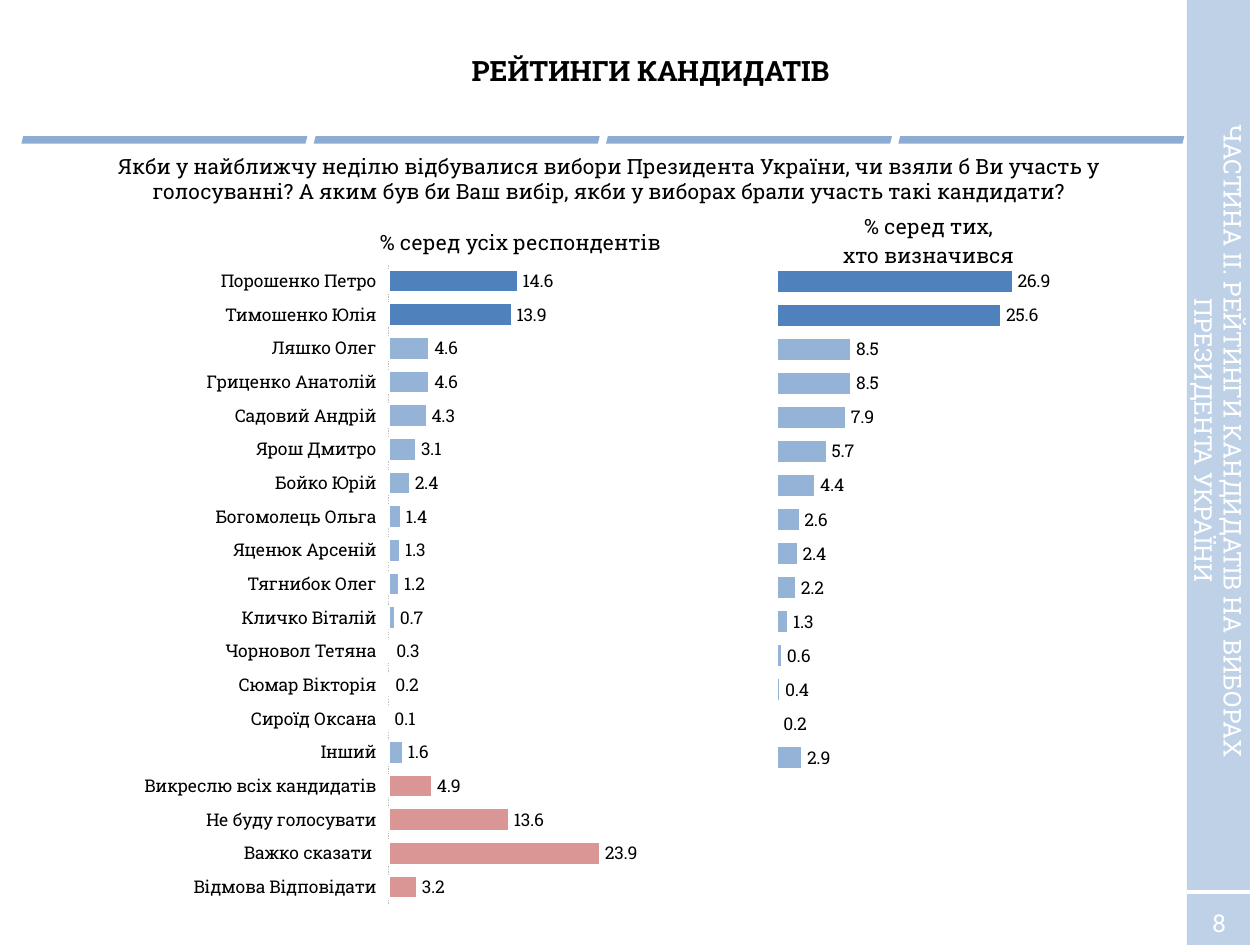
import pptx
import pptx.chart.data
import pptx.dml.color
import pptx.enum.chart
import pptx.enum.dml
import pptx.enum.shapes
import pptx.enum.text
import pptx.oxml
import pptx.oxml.ns
import pptx.util

PX = 9144  # EMU in one px, 100 px to the inch
FONT = "Roboto Slab"
COLOURS = {
    "leader": "4F81BD", "candidate": "95B3D7", "no_choice": "D99694",
    "axis": "BFBFBF", "text": "000000", "white": "FFFFFF",
}
# name, % of all respondents, % of those who decided, from top to bottom
RATINGS = [
    ("Порошенко Петро", 14.6, 26.9),
    ("Тимошенко Юлія", 13.9, 25.6),
    ("Ляшко Олег", 4.6, 8.5),
    ("Гриценко Анатолій", 4.6, 8.5),
    ("Садовий Андрій", 4.3, 7.9),
    ("Ярош Дмитро", 3.1, 5.7),
    ("Бойко Юрій", 2.4, 4.4),
    ("Богомолець Ольга", 1.4, 2.6),
    ("Яценюк Арсеній", 1.3, 2.4),
    ("Тягнибок Олег", 1.2, 2.2),
    ("Кличко Віталій", 0.7, 1.3),
    ("Чорновол Тетяна", 0.3, 0.6),
    ("Сюмар Вікторія", 0.2, 0.4),
    ("Сироїд Оксана", 0.1, 0.2),
    ("Інший", 1.6, 2.9),
    ("Викреслю всіх кандидатів", 4.9, None),
    ("Не буду голосувати", 13.6, None),
    ("Важко сказати ", 23.9, None),
    ("Відмова Відповідати", 3.2, None),
]


def emu(box):
    return [value * PX for value in box]


def rgb(name):
    return pptx.dml.color.RGBColor.from_string(COLOURS[name])


def add_element(parent, tag, **attributes):
    child = parent.makeelement(pptx.oxml.ns.qn(tag), attributes)
    parent.append(child)
    return child


def style_font(font, size, colour="text", bold=False):
    font.name = FONT
    font.size = pptx.util.Pt(size)
    font.bold = bold
    font.color.rgb = rgb(colour)


def paint(fill, colour):
    fill.solid()
    fill.fore_color.rgb = rgb(colour)


def add_tinted_shape(page, kind, box, colour, opacity):
    shape = page.shapes.add_shape(kind, *emu(box))
    shape.shadow.inherit = False
    paint(shape.fill, colour)
    shape.line.fill.background()
    tint = shape._element.spPr.find(".//" + pptx.oxml.ns.qn("a:srgbClr"))
    add_element(tint, "a:alpha", val=str(opacity * 1000))


def add_text(page, box, lines, size, colour="text", bold=False,
             anchor=pptx.enum.text.MSO_ANCHOR.MIDDLE):
    label = page.shapes.add_textbox(*emu(box))
    frame = label.text_frame
    frame.word_wrap = True
    frame.vertical_anchor = anchor
    for number, line in enumerate(lines):
        para = frame.add_paragraph() if number else frame.paragraphs[0]
        para.alignment = pptx.enum.text.PP_ALIGN.CENTER
        if number:
            para.space_before = pptx.util.Pt(2)
        span = para.add_run()
        span.text = line
        style_font(span.font, size, colour, bold)
    return label


def add_sidebar(page, box, section, number):
    left, top, width, height = box
    add_tinted_shape(page, pptx.enum.shapes.MSO_SHAPE.RECTANGLE, box, "candidate", 60)
    add_text(page, (left - 4, top + 715, width + 9, 34), [number], 14, "white")
    rule = page.shapes.add_connector(
        pptx.enum.shapes.MSO_CONNECTOR.STRAIGHT,
        *emu((left, top + 708, left + width, top + 708)))
    rule.line.color.rgb = rgb("white")
    rule.line.width = pptx.util.Pt(2)
    add_element(rule._element.spPr, "a:effectLst")
    heading = add_text(page, (left - 250, top + 321, 550, 57), [section], 14, "white",
                       anchor=pptx.enum.text.MSO_ANCHOR.TOP)
    heading.rotation = 90


def add_divider(page, box, count=4, gap=5):
    left, top, width, height = box
    pitch = (width + gap) // count
    for index in range(count):
        add_tinted_shape(page, pptx.enum.shapes.MSO_SHAPE.PARALLELOGRAM,
                         (left + index * pitch, top, pitch - gap, height), "leader", 65)


def set_plot_area(chart, **layout):
    """Fix the inner plot area as fractions of the chart and clear the background."""
    space = chart._chartSpace
    plot_area = space.find(".//" + pptx.oxml.ns.qn("c:plotArea"))
    for old in plot_area.findall(pptx.oxml.ns.qn("c:layout")):
        plot_area.remove(old)
    holder = add_element(plot_area, "c:layout")
    plot_area.insert(0, holder)
    manual = add_element(holder, "c:manualLayout")
    settings = {"layoutTarget": "inner", "xMode": "edge", "yMode": "edge", **layout}
    for tag, value in settings.items():
        add_element(manual, "c:" + tag, val=str(value))
    background = add_element(space, "c:spPr")
    add_element(background, "a:noFill")
    add_element(add_element(background, "a:ln"), "a:noFill")
    space.find(pptx.oxml.ns.qn("c:chart")).addnext(background)


def style_category_axis(axis):
    axis.has_major_gridlines = False
    axis.major_tick_mark = pptx.enum.chart.XL_TICK_MARK.NONE
    axis.minor_tick_mark = pptx.enum.chart.XL_TICK_MARK.NONE
    axis.tick_label_position = pptx.enum.chart.XL_TICK_LABEL_POSITION.LOW
    style_font(axis.tick_labels.font, 10)
    axis.format.line.color.rgb = rgb("axis")
    axis.format.line.width = pptx.util.Pt(0.75)
    axis.format.line.dash_style = pptx.enum.dml.MSO_LINE.ROUND_DOT


def add_rating_chart(page, box, names, values, point_colours, plot_width, show_names):
    data = pptx.chart.data.CategoryChartData(number_format="0.0")
    data.categories = names
    data.add_series("Series 1", values)
    chart = page.shapes.add_chart(
        pptx.enum.chart.XL_CHART_TYPE.BAR_CLUSTERED, *emu(box), data).chart
    chart.has_legend = False
    chart.has_title = False
    style_font(chart.font, 10)
    set_plot_area(chart, x=0.457, y=0.018, w=plot_width, h=0.949)

    style_category_axis(chart.category_axis)
    chart.category_axis.visible = show_names
    chart.value_axis.has_major_gridlines = False
    chart.value_axis.minimum_scale = 0
    chart.value_axis.maximum_scale = 45
    chart.value_axis.visible = False

    plot = chart.plots[0]
    plot.gap_width = 50
    plot.vary_by_categories = False
    bars = plot.series[0]
    bars.invert_if_negative = False
    for index, colour in point_colours.items():
        paint(bars.points[index].format.fill, colour)
        bars.points[index].format.line.color.rgb = rgb("white")
        bars.points[index].format.line.width = pptx.util.Pt(1)
    paint(bars.format.fill, "candidate")
    bars.format.line.color.rgb = rgb("white")
    bars.format.line.width = pptx.util.Pt(1)
    labels = bars.data_labels
    labels.show_value = True
    labels.number_format = "0.0"
    labels.number_format_is_linked = False
    labels.position = pptx.enum.chart.XL_LABEL_POSITION.OUTSIDE_END
    style_font(labels.font, 10)


def add_ratings(page, box):
    left, top, width, height = box
    names, everyone, decided = zip(*reversed(RATINGS))
    leaders = {17: "leader", 18: "leader"}
    no_choice = dict.fromkeys(range(4), "no_choice")
    ranks = [str(rank + 1) for rank in range(len(names))]
    add_rating_chart(page, (left + 308, top + 30, 675, 541), ranks, decided,
                     leaders, 0.464, False)
    add_rating_chart(page, (left, top + 30, 675, 535), names, everyone,
                     {**no_choice, **leaders}, 0.468, True)
    add_text(page, (left + 284, top + 1, 258, 42), ["% серед усіх респондентів"], 12)
    add_text(page, (left + 608, top, 258, 42), ["% серед тих,", "хто визначився"], 12)


def main():
    deck = pptx.Presentation()
    deck.slide_width, deck.slide_height = emu((1000, 750))
    page = deck.slides.add_slide(deck.slide_layouts[6])
    add_sidebar(page, (942, 0, 50, 750),
                "ЧАСТИНА ІI. РЕЙТИНГИ КАНДИДАТІВ НА ВИБОРАХ ПРЕЗИДЕНТА УКРАЇНИ", "8")
    add_divider(page, (17, 108, 923, 6))
    add_ratings(page, (0, 170, 983, 571))
    add_text(page, (100, 18, 833, 75), ["РЕЙТИНГИ КАНДИДАТІВ"], 16, bold=True)
    question = ("Якби у найближчу неділю відбувалися вибори Президента України, "
                "чи взяли б Ви участь у голосуванні? А яким був би Ваш вибір, "
                "якби у виборах брали участь такі кандидати?")
    add_text(page, (67, 117, 833, 49), [question], 12)
    deck.save("out.pptx")


if __name__ == "__main__":
    main()
